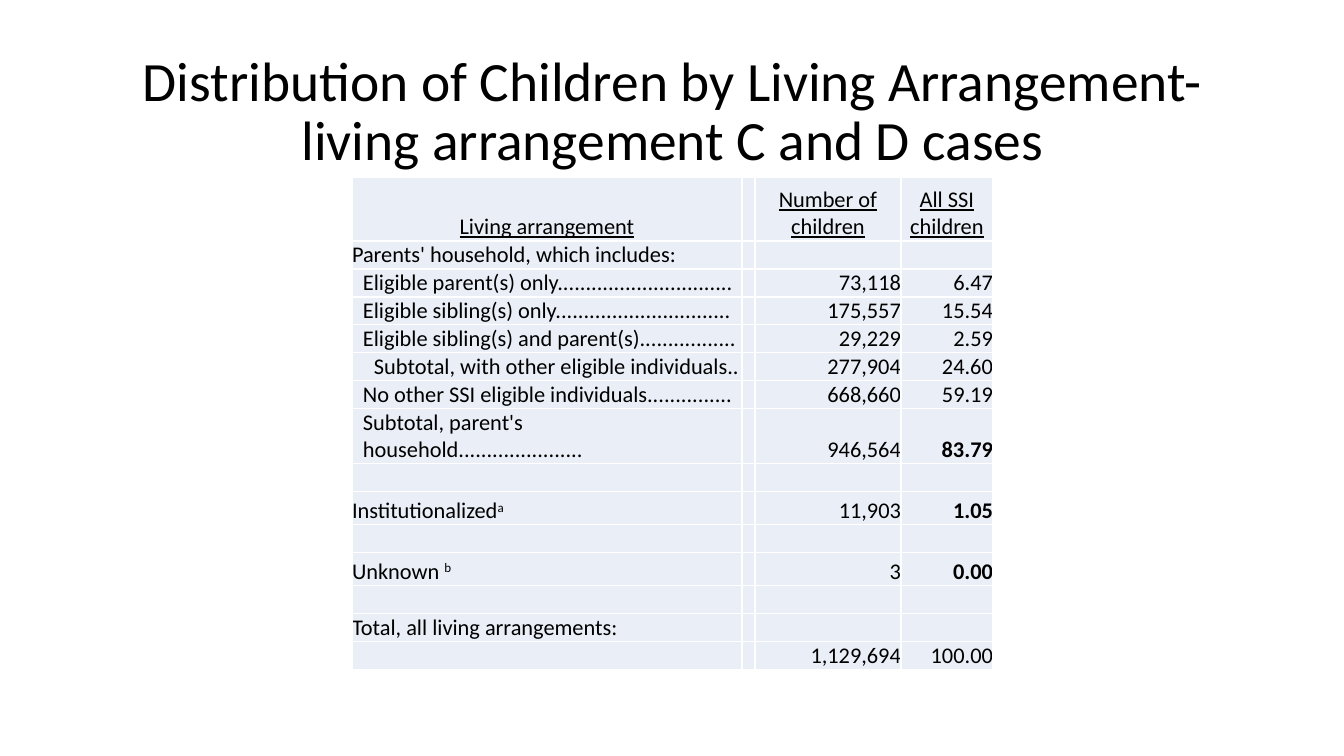
from dataclasses import dataclass

from lxml.etree import SubElement
from pptx import Presentation
from pptx.dml.color import RGBColor
from pptx.enum.text import MSO_ANCHOR, MSO_AUTO_SIZE, PP_ALIGN
from pptx.oxml.ns import qn
from pptx.slide import Slide
from pptx.table import Table, _Cell
from pptx.util import Emu, Pt

EMU_PER_PX = 914400 / 100.8
FONT = "Calibri"
BLACK = RGBColor(0x00, 0x00, 0x00)
WHITE = RGBColor(0xFF, 0xFF, 0xFF)
PALE_BLUE = RGBColor(0xEA, 0xEF, 0xF7)
TITLE = "Distribution of Children by Living Arrangement-living arrangement C and D cases"
TITLE_SIZE = 39.6
TABLE_SIZE = 16
BORDER_WIDTH = 1
INDENT = 11
COLUMN_WIDTHS = [390, 13, 146, 92]
ROW_HEIGHT = 28


@dataclass(frozen=True)
class ArrangementRow:
    label: str = ""
    number: str = ""
    share: str = ""
    level: int = 0
    note: str = ""
    bold_share: bool = False
    header: bool = False
    height: int = ROW_HEIGHT


ROWS = [
    ArrangementRow("Living arrangement", "Number of children", "All SSI children",
                   header=True, height=64),
    ArrangementRow("Parents' household, which includes:"),
    ArrangementRow("Eligible parent(s) only...............................",
                   "73,118", "6.47", level=1),
    ArrangementRow("Eligible sibling(s) only...............................",
                   "175,557", "15.54", level=1),
    ArrangementRow("Eligible sibling(s) and parent(s).................",
                   "29,229", "2.59", level=1),
    ArrangementRow("Subtotal, with other eligible individuals..",
                   "277,904", "24.60", level=2),
    ArrangementRow("No other SSI eligible individuals...............",
                   "668,660", "59.19", level=1),
    ArrangementRow("Subtotal, parent's household......................",
                   "946,564", "83.79", level=1, bold_share=True, height=55),
    ArrangementRow(),
    ArrangementRow("Institutionalized", "11,903", "1.05",
                   note="a", bold_share=True, height=33),
    ArrangementRow(),
    ArrangementRow("Unknown ", "3", "0.00", note="b", bold_share=True, height=33),
    ArrangementRow(),
    ArrangementRow("Total, all living arrangements:"),
    ArrangementRow(number="1,129,694", share="100.00"),
]


def px(length: int) -> Emu:
    return Emu(round(length * EMU_PER_PX))


def add_run(paragraph, text: str, size: float, bold: bool = False,
            underline: bool = False, superscript: bool = False) -> None:
    run = paragraph.add_run()
    run.text = text
    run.font.name = FONT
    run.font.size = Pt(size)
    run.font.color.rgb = BLACK
    run.font.bold = bold
    run.font.underline = underline
    if superscript:
        run.font._element.set("baseline", "30000")


def add_title(slide: Slide) -> None:
    title = slide.shapes.title
    title.left, title.top, title.width, title.height = map(px, (93, 40, 1159, 146))
    frame = title.text_frame
    frame.word_wrap = True
    frame.auto_size = MSO_AUTO_SIZE.NONE
    frame.vertical_anchor = MSO_ANCHOR.MIDDLE
    paragraph = frame.paragraphs[0]
    paragraph.alignment = PP_ALIGN.CENTER
    paragraph.line_spacing = 0.9
    add_run(paragraph, TITLE, TITLE_SIZE)


def format_cell(cell: _Cell, indent: int) -> None:
    cell.vertical_anchor = MSO_ANCHOR.BOTTOM
    cell.margin_left = px(indent)
    cell.margin_right = cell.margin_top = cell.margin_bottom = 0
    properties = cell._tc.get_or_add_tcPr()
    for side in ("lnL", "lnR", "lnT", "lnB"):
        line = SubElement(properties, qn(f"a:{side}"), w=str(Pt(BORDER_WIDTH)))
        line_fill = SubElement(line, qn("a:solidFill"))
        SubElement(line_fill, qn("a:srgbClr"), val=str(WHITE))
    cell.fill.solid()
    cell.fill.fore_color.rgb = PALE_BLUE


def fill_row(table: Table, index: int, row: ArrangementRow) -> None:
    table.rows[index].height = px(row.height)
    for column, text in enumerate((row.label, "", row.number, row.share)):
        cell = table.cell(index, column)
        format_cell(cell, row.level * INDENT if column == 0 else 0)
        paragraph = cell.text_frame.paragraphs[0]
        if not text:
            SubElement(paragraph._p, qn("a:endParaRPr"), sz=str(TABLE_SIZE * 100))
            continue
        if row.header:
            paragraph.alignment = PP_ALIGN.CENTER
        else:
            paragraph.alignment = PP_ALIGN.LEFT if column == 0 else PP_ALIGN.RIGHT
        add_run(paragraph, text, TABLE_SIZE, bold=row.bold_share and column == 3,
                underline=row.header)
        if row.note and column == 0:
            add_run(paragraph, row.note, TABLE_SIZE, superscript=True)


def add_arrangement_table(slide: Slide) -> None:
    width = sum(COLUMN_WIDTHS)
    height = sum(row.height for row in ROWS)
    table = slide.shapes.add_table(
        len(ROWS), len(COLUMN_WIDTHS), px(352), px(177), px(width), px(height)).table
    table.first_row = False
    table.horz_banding = False
    for column, column_width in zip(table.columns, COLUMN_WIDTHS):
        column.width = px(column_width)
    for index, row in enumerate(ROWS):
        fill_row(table, index, row)


def main() -> None:
    presentation = Presentation()
    presentation.slide_width = px(1344)
    presentation.slide_height = px(756)
    slide = presentation.slides.add_slide(presentation.slide_layouts[5])
    add_title(slide)
    add_arrangement_table(slide)
    presentation.save("out.pptx")


if __name__ == "__main__":
    main()
